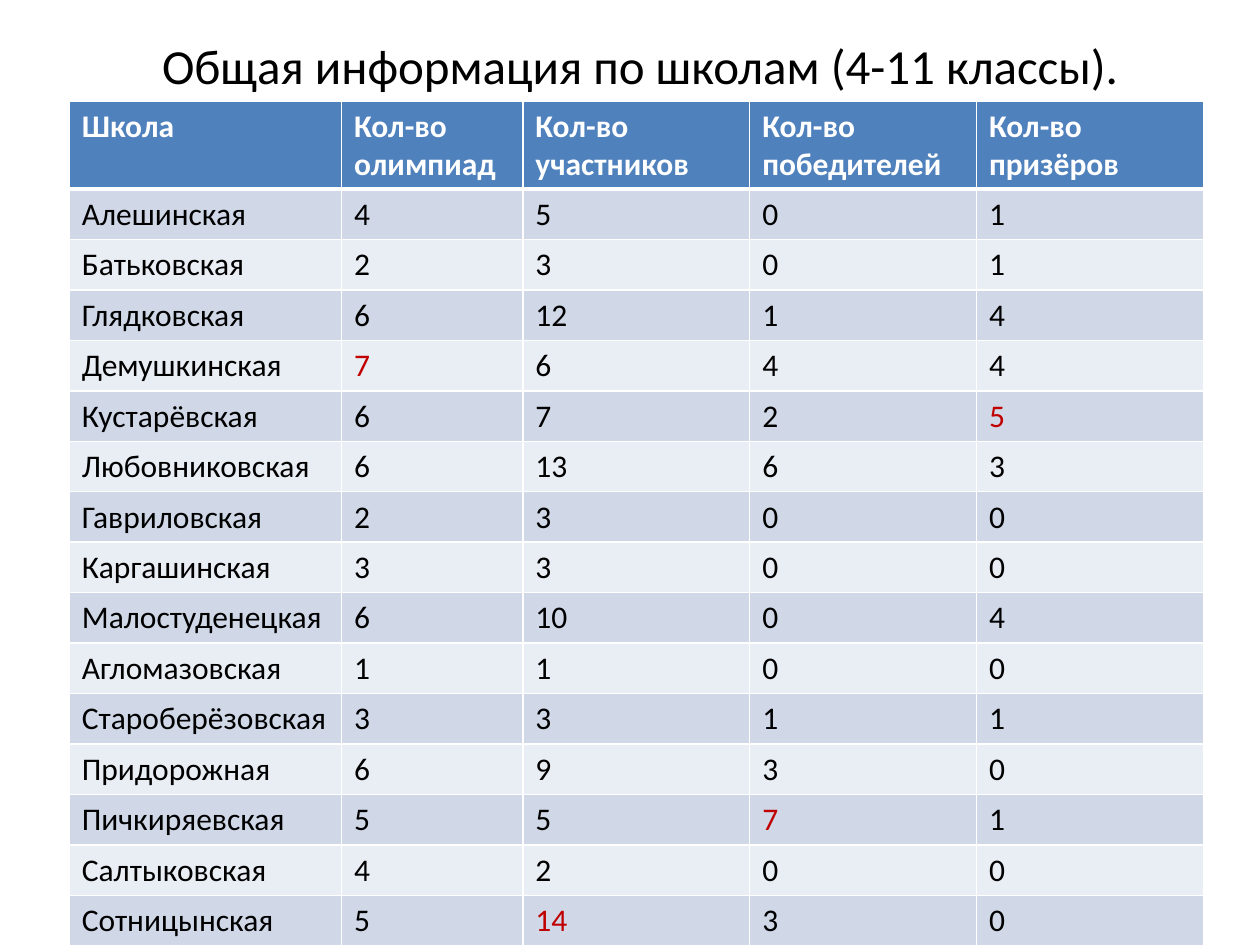
import pptx
import pptx.util
import pptx.dml.color
import pptx.enum.text
import pptx.oxml
import pptx.oxml.ns

Inches = pptx.util.Inches
Pt = pptx.util.Pt

HEADING = "Общая информация по школам (4-11 классы)."
COLUMNS = [
    ("Школа", 2.16),
    ("Кол-во олимпиад", 1.44),
    ("Кол-во участников", 1.8),
    ("Кол-во победителей", 1.8),
    ("Кол-во призёров", 1.8),
]
SCHOOLS = [
    ("Алешинская", 4, 5, 0, 1),
    ("Батьковская", 2, 3, 0, 1),
    ("Глядковская", 6, 12, 1, 4),
    ("Демушкинская", 7, 6, 4, 4),
    ("Кустарёвская", 6, 7, 2, 5),
    ("Любовниковская", 6, 13, 6, 3),
    ("Гавриловская", 2, 3, 0, 0),
    ("Каргашинская", 3, 3, 0, 0),
    ("Малостуденецкая", 6, 10, 0, 4),
    ("Агломазовская", 1, 1, 0, 0),
    ("Староберёзовская", 3, 3, 1, 1),
    ("Придорожная", 6, 9, 3, 0),
    ("Пичкиряевская", 5, 5, 7, 1),
    ("Салтыковская", 4, 2, 0, 0),
    ("Сотницынская", 5, 14, 3, 0),
]
COLORS = {
    "text": "000000",
    "header_text": "FFFFFF",
    "best": "C00000",
    "header": "4F81BD",
    "odd": "D0D8E8",
    "even": "E9EDF4",
    "border": "FFFFFF",
}
HEADER_HEIGHT, ROW_HEIGHT = 0.69, 0.4


def rgb(name):
    return pptx.dml.color.RGBColor.from_string(COLORS[name])


def write(frame, text, color, **font_values):
    run = frame.paragraphs[0].add_run()
    run.text = text
    run.font.color.rgb = rgb(color)
    for key, value in {"name": "Calibri", **font_values}.items():
        setattr(run.font, key, value)


def add_borders(cell, widths):
    for side, width in widths.items():
        cell._tc.get_or_add_tcPr().append(pptx.oxml.parse_xml(
            f'<a:ln{side} {pptx.oxml.ns.nsdecls("a")} w="{Pt(width)}">'
            f'<a:solidFill><a:srgbClr val="{COLORS["border"]}"/></a:solidFill>'
            f'</a:ln{side}>'))


def add_heading(slide):
    heading = slide.shapes.add_textbox(Inches(0.86), Inches(0.23), Inches(8.44), Inches(0.57))
    frame = heading.text_frame
    frame.word_wrap = True
    frame.auto_size = pptx.enum.text.MSO_AUTO_SIZE.SHAPE_TO_FIT_TEXT
    frame.paragraphs[0].alignment = pptx.enum.text.PP_ALIGN.CENTER
    write(frame, HEADING, "text", size=Pt(28))


def add_results(slide):
    width = sum(column_width for _, column_width in COLUMNS)
    height = HEADER_HEIGHT + ROW_HEIGHT * len(SCHOOLS)
    results = slide.shapes.add_table(
        len(SCHOOLS) + 1, len(COLUMNS),
        Inches(0.55), Inches(0.8), Inches(width), Inches(height)).table
    for column, (_, column_width) in zip(results.columns, COLUMNS):
        column.width = Inches(column_width)

    best = [max(values) for values in list(zip(*SCHOOLS))[1:]]
    lines = [[title for title, _ in COLUMNS], *SCHOOLS]
    for r, line in enumerate(lines):
        is_header = r == 0
        results.rows[r].height = Inches(HEADER_HEIGHT if is_header else ROW_HEIGHT)
        fill = "header" if is_header else "odd" if r % 2 else "even"
        borders = {"L": 1, "R": 1, "T": 3 if r == 1 else 1, "B": 3 if is_header else 1}
        for c, value in enumerate(line):
            cell = results.cell(r, c)
            add_borders(cell, borders)
            cell.fill.solid()
            cell.fill.fore_color.rgb = rgb(fill)
            is_best = c > 0 and value == best[c - 1]
            color = "header_text" if is_header else "best" if is_best else "text"
            write(cell.text_frame, str(value), color, size=Pt(18), bold=is_header)


def main():
    deck = pptx.Presentation()
    deck.slide_width, deck.slide_height = Inches(10), Inches(7.5)
    slide = deck.slides.add_slide(deck.slide_layouts[6])
    add_heading(slide)
    add_results(slide)
    deck.save("out.pptx")


if __name__ == "__main__":
    main()
